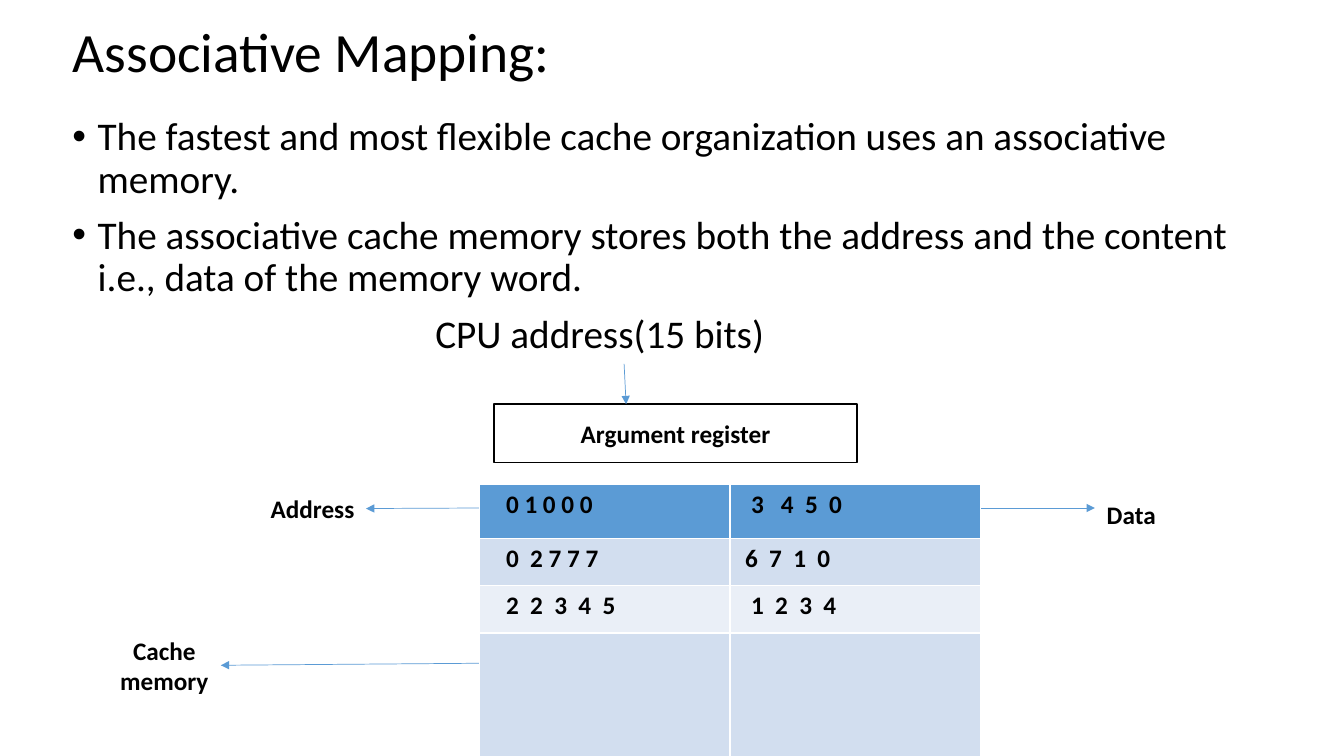
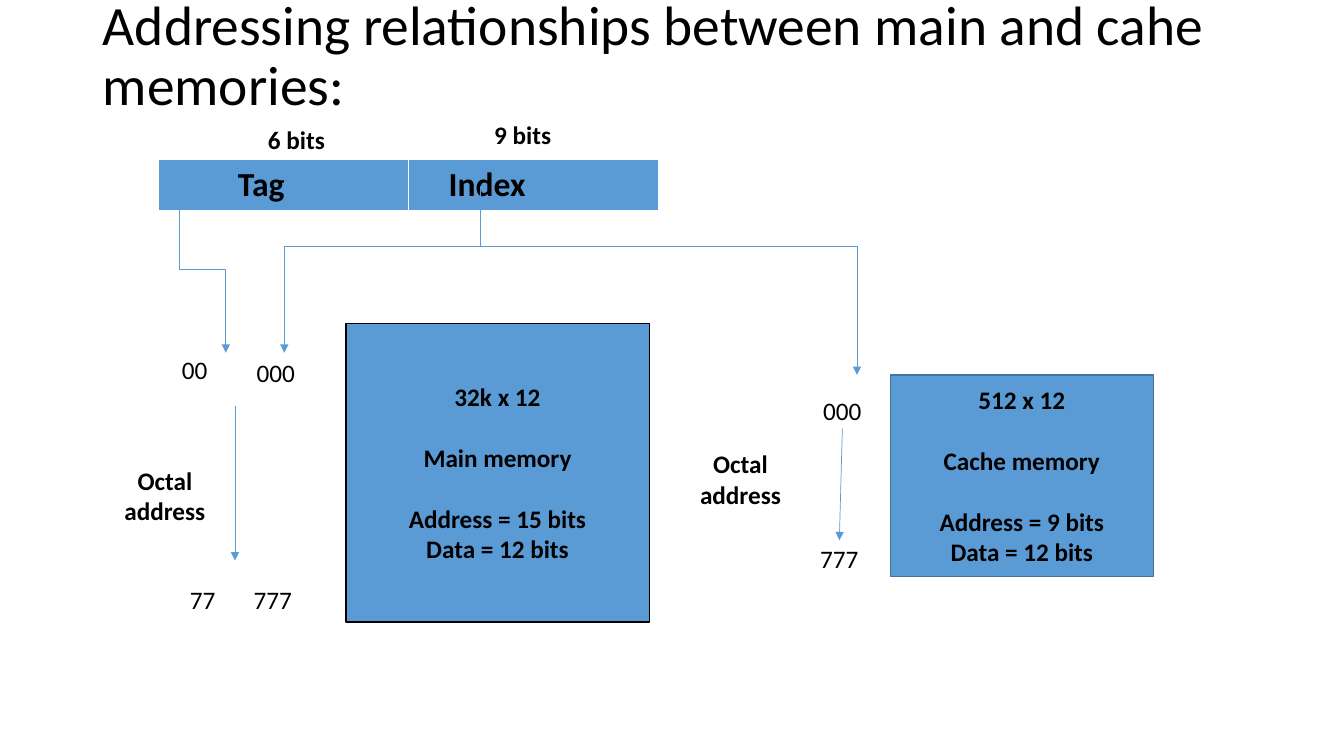
import pptx
import pptx.util
import pptx.dml.color
import pptx.enum.dml
import pptx.enum.shapes
import pptx.enum.text
import pptx.oxml
import pptx.oxml.ns

Inches = pptx.util.Inches
Pt = pptx.util.Pt
RGBColor = pptx.dml.color.RGBColor
ALIGN = pptx.enum.text.PP_ALIGN
ANCHOR = pptx.enum.text.MSO_ANCHOR
CONNECTOR = pptx.enum.shapes.MSO_CONNECTOR

# Shared style
FONT = "Calibri"
BLACK = RGBColor(0x00, 0x00, 0x00)
WHITE = RGBColor(0xFF, 0xFF, 0xFF)
BLUE = RGBColor(0x5B, 0x9B, 0xD5)
DARK_BLUE = RGBColor(0x43, 0x73, 0x9E)
BAND_DARK = RGBColor(0xD2, 0xDE, 0xEF)
BAND_LIGHT = RGBColor(0xEA, 0xEF, 0xF7)
TITLE_ONLY = 5


def add_span(para, text, size, bold=False):
    span = para.add_run()
    span.text = text
    span.font.name = FONT
    span.font.size = Pt(size)
    span.font.bold = bold
    span.font.color.rgb = BLACK


def add_page(deck, title, left, top, width, height):
    """Add a title-only page and format its title."""
    page = deck.slides.add_slide(deck.slide_layouts[TITLE_ONLY])
    box = page.shapes.title
    box.left, box.top = Inches(left), Inches(top)
    box.width, box.height = Inches(width), Inches(height)
    frame = box.text_frame
    frame.word_wrap = True
    frame.auto_size = pptx.enum.text.MSO_AUTO_SIZE.NONE
    frame.vertical_anchor = ANCHOR.MIDDLE
    para = frame.paragraphs[0]
    para.alignment = ALIGN.LEFT
    para.line_spacing = 0.9
    add_span(para, title, 39.6)
    return page


def write_centred(box, lines, bold):
    """Write (text, space before) lines in the middle of a box."""
    frame = box.text_frame
    frame.word_wrap = True
    frame.vertical_anchor = ANCHOR.MIDDLE
    for number, (text, gap) in enumerate(lines):
        para = frame.add_paragraph() if number else frame.paragraphs[0]
        para.alignment = ALIGN.CENTER
        para.space_before = Pt(gap)
        add_span(para, text, 18, bold)


def add_label(page, text, left, top, width, height, bold=True):
    box = page.shapes.add_textbox(Inches(left), Inches(top),
                                  Inches(width), Inches(height))
    write_centred(box, [(text, 0)], bold)
    return box


def add_block(page, lines, left, top, width, height, fill, outline):
    box = page.shapes.add_shape(pptx.enum.shapes.MSO_SHAPE.RECTANGLE,
                                Inches(left), Inches(top),
                                Inches(width), Inches(height))
    box.shadow.inherit = False
    box.fill.solid()
    box.fill.fore_color.rgb = fill
    box.line.color.rgb = outline
    box.line.width = Pt(1)
    write_centred(box, lines, True)
    return box


def add_link(page, start, end, arrow=True, kind=CONNECTOR.STRAIGHT):
    link = page.shapes.add_connector(kind, *map(Inches, start + end))
    link.line.color.rgb = BLUE
    link.line.width = Pt(0.5)
    if arrow:
        tip = pptx.oxml.parse_xml(
            f'<a:tailEnd {pptx.oxml.ns.nsdecls("a")} type="triangle"/>')
        link.line._get_or_add_ln().append(tip)
    link._element.spPr.append(
        pptx.oxml.parse_xml(f'<a:effectLst {pptx.oxml.ns.nsdecls("a")}/>'))
    return link


def add_down_elbow(page, start, end):
    """Draw an arrow that runs down, across and down again."""
    across, down = end[0] - start[0], end[1] - start[1]
    middle_x, middle_y = (start[0] + end[0]) / 2, (start[1] + end[1]) / 2
    link = add_link(page, (middle_x + down / 2, middle_y - across / 2),
                    (middle_x - down / 2, middle_y + across / 2),
                    kind=CONNECTOR.ELBOW)
    link._element.spPr.get_or_add_xfrm().rot = 270


def add_grid(page, rows, fills, heights, left, top, column, size):
    """Add a table of (text, left margin) cells with one fill per row."""
    columns = len(rows[0])
    grid = page.shapes.add_table(
        len(rows), columns, Inches(left), Inches(top),
        Inches(column * columns), Inches(sum(heights))).table
    for track in grid.columns:
        track.width = Inches(column)
    for row, fill, height, track in zip(rows, fills, heights, grid.rows):
        track.height = Inches(height)
        for (text, margin), cell in zip(row, track.cells):
            cell.fill.solid()
            cell.fill.fore_color.rgb = fill
            cell.margin_left = Inches(margin)
            if text:
                add_span(cell.text_frame.paragraphs[0], text, size, True)


def add_points(page, points, caption, left, top, width, height):
    """Write bulleted points, then an indented caption."""
    box = page.shapes.add_textbox(Inches(left), Inches(top),
                                  Inches(width), Inches(height))
    frame = box.text_frame
    frame.word_wrap = True
    for number, text in enumerate(points + [caption]):
        para = frame.add_paragraph() if number else frame.paragraphs[0]
        para.line_spacing = 0.9
        para.space_before = Pt(10)
        add_span(para, text, 28)
        properties = para._p.get_or_add_pPr()
        if text == caption:
            properties.set("marL", str(Inches(3.6)))
            continue
        properties.set("marL", str(Inches(0.25)))
        properties.set("indent", str(-Inches(0.25)))
        for tag in ('buFont {} typeface="Arial"', 'buChar {} char="•"'):
            properties.append(pptx.oxml.parse_xml(
                f'<a:{tag.format(pptx.oxml.ns.nsdecls("a"))}/>'))


def add_cache_diagram(page, left, top):
    """Draw the register, the cache table and their labels."""
    column = 2.49
    right = left + 2 * column
    rows = [
        [("0 1 0 0 0", 0.27), ("3   4  5  0", 0.21)],
        [("0  2 7 7 7", 0.27), ("6  7  1  0", 0.15)],
        [("2  2  3  4  5", 0.27), ("1  2  3  4", 0.21)],
        [("", 0.1), ("", 0.1)],
    ]
    add_grid(page, rows, [BLUE, BAND_DARK, BAND_LIGHT, BAND_DARK],
             [0.53, 0.47, 0.47, 1.28], left, top, column, 18)
    add_block(page, [("Argument register", 0)],
              left + 0.15, top - 0.8, 3.6, 0.58, WHITE, BLACK)
    add_link(page, (left + 1.44, top - 1.2), (left + 1.46, top - 0.8))

    # Labels joined to the table
    address = add_label(page, "Address", left - 2.18, top, 1.06, 0.47)
    cache = add_label(page, "Cache memory", left - 3.68, top + 1.46, 1.12, 0.66)
    for label, offset in ((address, 0.23), (cache, 1.77)):
        link = add_link(page, (left, top + offset), (left - 1, top + offset))
        link.end_connect(label, 3)
    add_label(page, "Data", right + 1.12, top, 0.74, 0.58)
    add_link(page, (right, top + 0.23), (right + 1.13, top + 0.23))


def add_address_fields(page, left, top):
    """Draw the tag and index fields with their widths in bits."""
    add_grid(page, [[("Tag", 0.79), ("Index", 0.4)]], [BLUE], [0.47],
             left, top, 2.48, 24)
    add_label(page, "6 bits", left + 0.67, top - 0.41, 1.4, 0.42)
    add_label(page, "9 bits", left + 2.95, top - 0.46, 1.33, 0.42)


def add_index_routes(page, left, top, right):
    """Lead the tag and index down to the two memories."""
    stem = left + 1.94
    add_down_elbow(page, (left - 1.04, top - 0.59), (left - 0.58, top + 1.06))
    add_link(page, (stem, top - 0.59), (stem, top), arrow=False)
    for end, drop in ((left, 1.06), (right, 1.28)):
        add_link(page, (stem, top), (end, top), arrow=False)
        add_link(page, (end, top), (end, top + drop))


def add_memory(page, size, name, bits, left, top, width, height, outline):
    lines = [(size, 0), (name, 22), (f"Address = {bits} bits", 22),
             ("Data = 12 bits", 0)]
    add_block(page, lines, left, top, width, height, BLUE, outline)


def add_main_addresses(page, left, top):
    """Show the octal address range of main memory."""
    for text, x, y, width in (("00", 0.54, 0, 0.72), ("000", 1.35, 0.03, 0.71),
                              ("77", 0.75, 2.28, 0.46),
                              ("777", 1.3, 2.28, 0.75)):
        add_label(page, text, left + x, top + y, width, 0.39, bold=False)
    add_label(page, "Octal address", left, top + 1, 1.21, 0.89)
    add_link(page, (left + 1.3, top + 0.56), (left + 1.3, top + 2.09))


def add_cache_addresses(page, left, top):
    """Show the octal address range of cache memory."""
    add_label(page, "Octal address", left, top + 0.42, 1.07, 0.88)
    first = add_label(page, "000", left + 1.22, top, 0.65, 0.36, bold=False)
    last = add_label(page, "777", left + 1.19, top + 1.47, 0.65, 0.36,
                     bold=False)
    link = add_link(page, (left + 1.54, top + 0.36), (left + 1.52, top + 1.47))
    link.begin_connect(first, 2)
    link.end_connect(last, 0)


def build_mapping_page(deck):
    page = add_page(deck, "Associative Mapping:", 0.62, 0.18, 12.12, 0.72)
    points = [
        "The fastest and most flexible cache organization uses an "
        "associative memory.",
        "The associative cache memory stores both the address and the "
        "content i.e., data of the memory word.",
    ]
    add_points(page, points, "CPU address(15 bits)", 0.62, 1.11, 12.12, 2.5)
    add_cache_diagram(page, 4.75, 4.81)


def build_addressing_page(deck):
    page = add_page(
        deck, "Addressing relationships between main and cahe memories:",
        0.92, 0.4, 11.5, 0.34)
    add_address_fields(page, 1.57, 1.58)
    add_index_routes(page, 2.82, 2.44, 8.5)
    add_memory(page, "32k x 12", "Main memory", 15,
               3.43, 3.21, 3.01, 2.96, BLACK)
    add_memory(page, "512 x 12", "Cache memory", 9,
               8.83, 3.72, 2.61, 2, DARK_BLUE)
    add_main_addresses(page, 1.03, 3.47)
    add_cache_addresses(page, 6.81, 3.89)


def main():
    deck = pptx.Presentation()
    deck.slide_width = Inches(13.33)
    deck.slide_height = Inches(7.5)
    build_mapping_page(deck)
    build_addressing_page(deck)
    deck.save("out.pptx")


if __name__ == "__main__":
    main()
